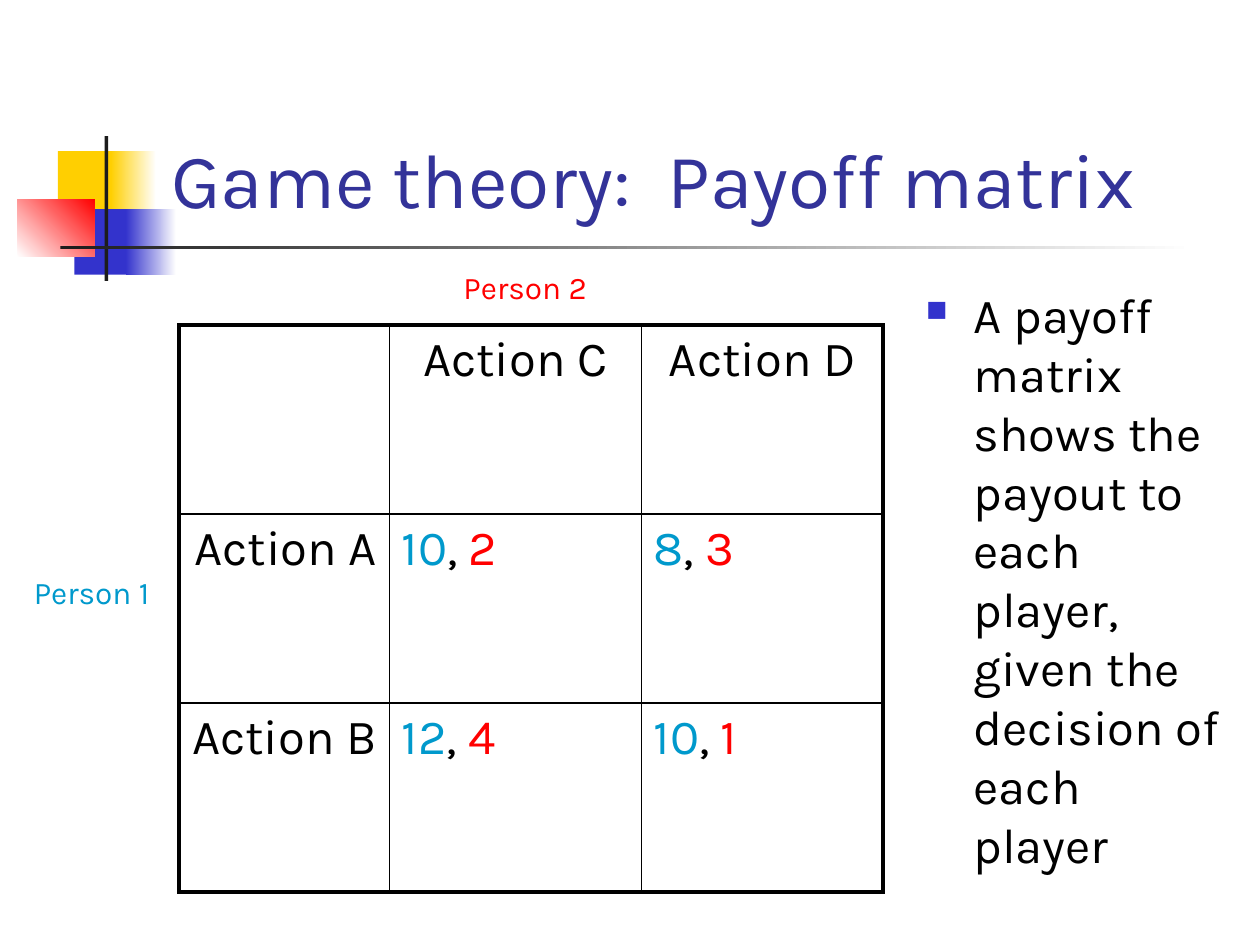
from lxml import etree
from pptx import Presentation
from pptx import util as u
from pptx.dml.color import RGBColor
from pptx.enum import shapes, text
from pptx.oxml import parse_xml
from pptx.oxml.ns import nsdecls, qn

BLACK, BLUE, RED, WHITE = "000000", "0099CC", "FF0000", "FFFFFF"
LEFT, MID, RIGHT = text.PP_ALIGN.LEFT, text.PP_ALIGN.CENTER, text.PP_ALIGN.RIGHT
TOP, BASE = text.MSO_ANCHOR.TOP, text.MSO_ANCHOR.BOTTOM


def tint(hue):
    return RGBColor.from_string(hue)


def write(par, runs, size):
    for words, hue in runs:
        run = par.add_run()
        run.text = words
        for name, value in {"name": "Karla", "size": u.Pt(size)}.items():
            setattr(run.font, name, value)
        run.font.color.rgb = tint(hue)


deck = Presentation()
deck.slide_width, deck.slide_height = u.Inches(10), u.Inches(7.5)
slide = deck.slides.add_slide(deck.slide_layouts[6])

# Corner blocks and title rule: box, start colour, end colour, angle
blocks = [
    ((0.46, 1.2, 0.48, 0.52), "FFCF01", None, 0),
    ((0.88, 1.2, 0.36, 0.52), "FFCF01", WHITE, 0),
    ((0.59, 1.66, 0.46, 0.52), "3333CC", None, 0),
    ((1, 1.66, 0.4, 0.52), "3333CC", WHITE, 0),
    ((0.14, 1.58, 0.61, 0.46), WHITE, RED, 45),
    ((0.83, 1.08, 0.03, 1.15), "1C1C1C", None, 0),
    ((0.48, 1.95, 9, 0.03), "1C1C1C", WHITE, 0),
]
for box, first, last, angle in blocks:
    rect = slide.shapes.add_shape(shapes.MSO_SHAPE.RECTANGLE, *map(u.Inches, box))
    rect.shadow.inherit = False
    rect.line.fill.background()
    if last:
        rect.fill.gradient()
        rect.fill.gradient_angle = angle
        for stop, hue, place in zip(rect.fill.gradient_stops, (first, last), (0, 1)):
            stop.color.rgb = tint(hue)
            stop.position = place
    else:
        rect.fill.solid()
        rect.fill.fore_color.rgb = tint(first)

# Title, body and player labels: box, words, size, colour, anchor, bullet
notes = [
    ((1.26, 0.23, 8.52, 1.6), "Game theory:  Payoff matrix", 44, "333399", BASE, False),
    ((7.25, 2.21, 2.54, 4.88), "A payoff matrix shows the payout to each player, "
     "given the decision of each player", 28, BLACK, TOP, True),
    ((0.17, 4.5, 1.17, 0.4), "Person 1", 18, BLUE, TOP, False),
    ((3.58, 2.08, 3.08, 0.4), "Person 2", 18, RED, TOP, False),
]
for box, words, size, hue, anchor, bullet in notes:
    frame = slide.shapes.add_textbox(*map(u.Inches, box)).text_frame
    for name, value in {"word_wrap": True, "vertical_anchor": anchor}.items():
        setattr(frame, name, value)
    par = frame.paragraphs[0]
    write(par, [(words, hue)], size)
    if bullet:
        props = par._p.get_or_add_pPr()
        props.set("marL", str(u.Inches(0.38)))
        props.set("indent", str(-u.Inches(0.38)))
        color = etree.SubElement(props, qn("a:buClr"))
        etree.SubElement(color, qn("a:srgbClr"), val="3333CC")
        etree.SubElement(props, qn("a:buSzPct"), val="60000")
        etree.SubElement(props, qn("a:buChar"), char="■")

# Payoff matrix: headings on the first row and column, payoffs inside
rows = [
    ["", "Action C", "Action D"],
    ["Action A", (10, 2), (8, 3)],
    ["Action B", (12, 4), (10, 1)],
]
grid = slide.shapes.add_table(3, 3, *map(u.Inches, (1.42, 2.58, 5.59, 4.5))).table
grid.first_row = grid.horz_banding = False
for col, width in zip(grid.columns, (1.67, 2, 1.92)):
    col.width = u.Inches(width)
for r, row in enumerate(rows):
    grid.rows[r].height = u.Inches(1.5)
    for c, value in enumerate(row):
        cell = grid.cell(r, c)
        par = cell.text_frame.paragraphs[0]
        if isinstance(value, tuple):
            one, two = map(str, value)
            par.alignment = LEFT
            write(par, [(one, BLUE), (", ", BLACK), (two, RED)], 28)
        elif value:
            par.alignment = MID if r == 0 else RIGHT
            write(par, [(value, BLACK)], 28)

        # Thick frame outside, thin lines inside
        props = cell._tc.get_or_add_tcPr()
        outer = {"L": c == 0, "R": c == 2, "T": r == 0, "B": r == 2}
        for side, thick in outer.items():
            wide = u.Pt(2.25 if thick else 1)
            props.append(parse_xml(
                f'<a:ln{side} {nsdecls("a")} w="{wide}"><a:solidFill>'
                f'<a:srgbClr val="{BLACK}"/></a:solidFill></a:ln{side}>'))
        cell.fill.background()

deck.save("out.pptx")
